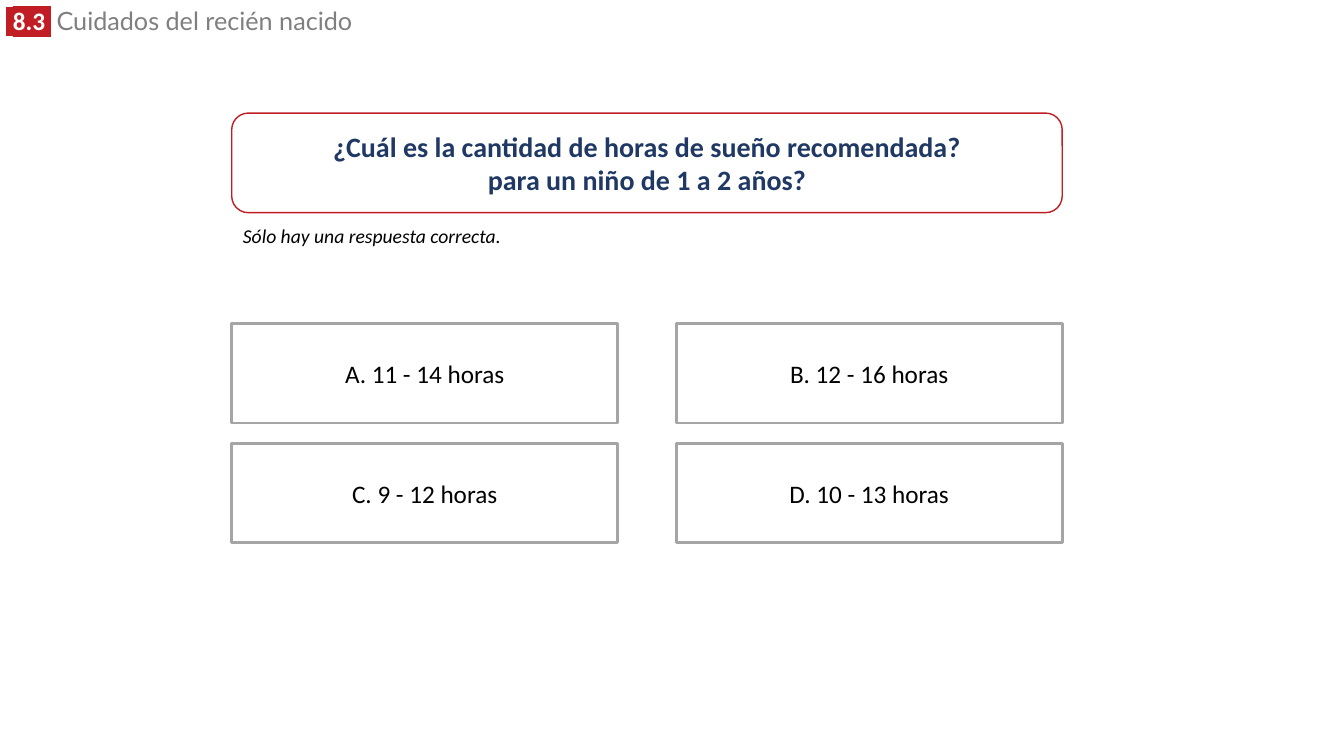
from lxml import etree
from pptx import Presentation
from pptx import util as u
from pptx.dml.color import RGBColor
from pptx.enum import shapes, text
from pptx.oxml.ns import qn

RED, NAVY, GREY, BORDER = "C01E24", "203864", "7F7F7F", "A5A5A5"
WHITE, BLACK = "FFFFFF", "000000"

LEFT, QUESTION_WIDTH, BOX_HEIGHT = 5.84, 20.93, 2.51
ANSWER_TOP, ANSWER_WIDTH = 8.15, 9.73
COLUMN_STEP, ROW_STEP = 11.2, 3.02
ANSWERS = ["A. 11 - 14 horas", "B. 12 - 16 horas",
           "C. 9 - 12 horas", "D. 10 - 13 horas"]


def rgb(hex_colour):
    return RGBColor.from_string(hex_colour)


def add_run(paragraph, words, size, colour, font="Calibri", bold=False,
            italic=False, highlight=None):
    run = paragraph.add_run()
    run.text = words
    run.font.size = u.Pt(size)
    run.font.bold = bold
    run.font.italic = italic
    run.font.name = font
    run.font.color.rgb = rgb(colour)
    if highlight:
        marker = etree.Element(qn("a:highlight"))
        etree.SubElement(marker, qn("a:srgbClr"), val=highlight)
        run.font._element.find(qn("a:solidFill")).addnext(marker)


def add_label(slide, left, top, width, height):
    """Add a wrapping text box and return its first paragraph."""
    label = slide.shapes.add_textbox(
        u.Cm(left), u.Cm(top), u.Cm(width), u.Cm(height))
    label.text_frame.word_wrap = True
    return label.text_frame.paragraphs[0]


def add_box(slide, kind, left, top, width, border, border_width, lines, **style):
    """Add a white outlined box with one centred paragraph per line."""
    box = slide.shapes.add_shape(
        kind, u.Cm(left), u.Cm(top), u.Cm(width), u.Cm(BOX_HEIGHT))
    box.shadow.inherit = False
    box.fill.solid()
    box.fill.fore_color.rgb = rgb(WHITE)
    box.line.color.rgb = rgb(border)
    box.line.width = u.Pt(border_width)
    frame = box.text_frame
    frame.word_wrap = True
    frame.vertical_anchor = text.MSO_ANCHOR.MIDDLE
    for index, line in enumerate(lines):
        paragraph = frame.add_paragraph() if index else frame.paragraphs[0]
        paragraph.alignment = text.PP_ALIGN.CENTER
        add_run(paragraph, line, **style)


def add_heading(slide):
    heading = add_label(slide, -0.1, 0.15, 11.71, 0.86)
    heading.line_spacing = 0.8
    add_run(heading, " ", 18, WHITE, font="Arial", bold=True, highlight=RED)
    add_run(heading, "8.3 ", 18, WHITE, bold=True, highlight=RED)
    add_run(heading, " ", 18, GREY)
    add_run(heading, "Cuidados del recién nacido", 18, GREY, font="Lato")


def add_answers(slide):
    for index, answer in enumerate(ANSWERS):
        row, column = divmod(index, 2)
        add_box(slide, shapes.MSO_SHAPE.RECTANGLE,
                LEFT + column * COLUMN_STEP, ANSWER_TOP + row * ROW_STEP,
                ANSWER_WIDTH, BORDER, 2, [answer], size=18, colour=BLACK)


def main():
    deck = Presentation()
    deck.slide_width, deck.slide_height = u.Cm(33.87), u.Cm(19.05)
    slide = deck.slides.add_slide(deck.slide_layouts[6])
    add_heading(slide)
    add_box(slide, shapes.MSO_SHAPE.ROUNDED_RECTANGLE, LEFT, 2.85,
            QUESTION_WIDTH, RED, 1,
            ["¿Cuál es la cantidad de horas de sueño recomendada?",
             "para un niño de 1 a 2 años?"],
            size=20, colour=NAVY, bold=True)
    hint = add_label(slide, 5.87, 5.51, 8.53, 0.86)
    add_run(hint, "Sólo hay una respuesta correcta.", 14, BLACK, italic=True)
    add_answers(slide)
    deck.save("out.pptx")


if __name__ == "__main__":
    main()
